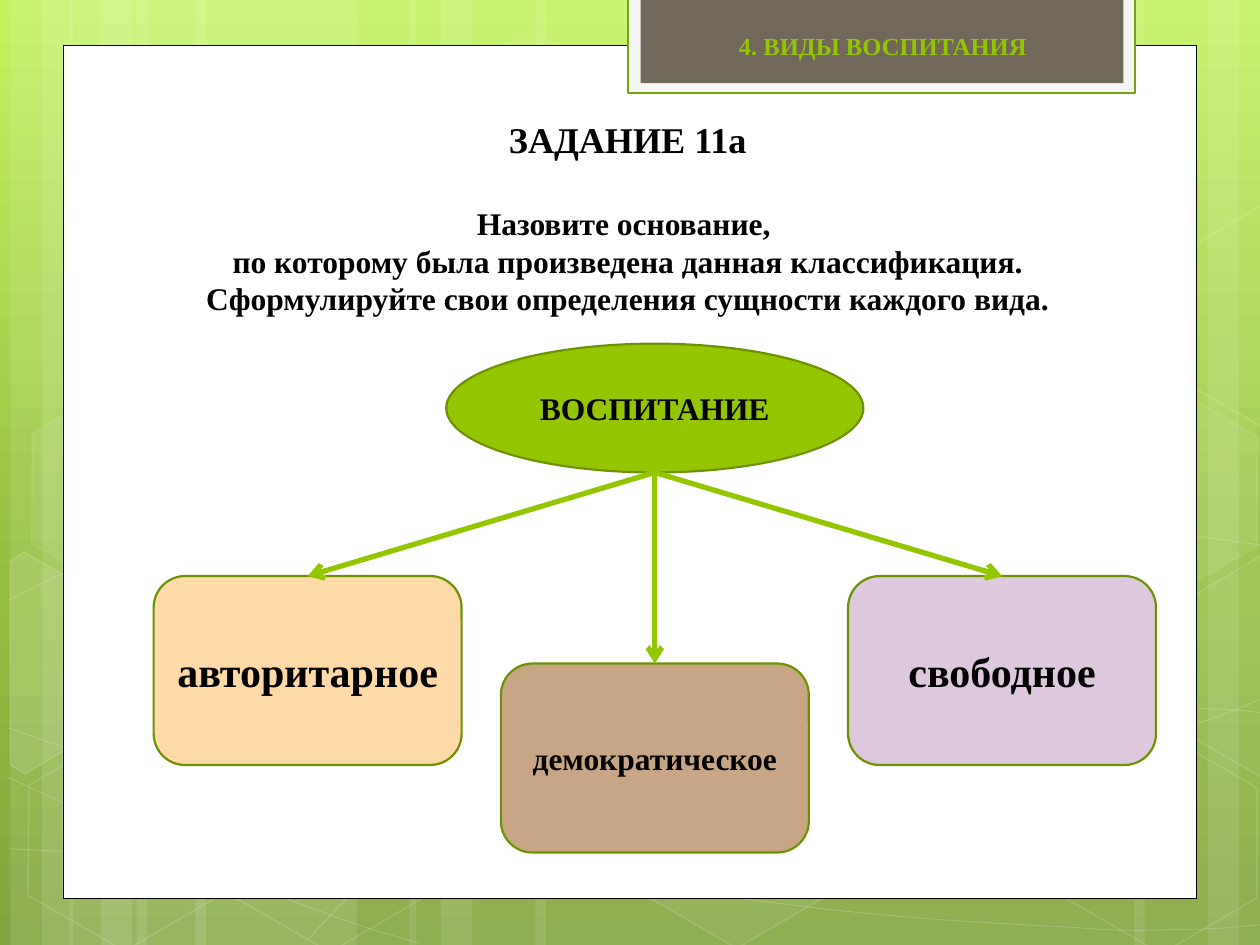
from math import cos, radians, sin

from lxml.etree import SubElement
from pptx import Presentation
from pptx.dml.color import RGBColor
from pptx.enum.shapes import MSO_CONNECTOR, MSO_SHAPE
from pptx.enum.text import MSO_ANCHOR, PP_ALIGN
from pptx.oxml.ns import qn
from pptx.util import Pt

COLORS = {
    "sky": "C3F35F", "grass": "93BF3F", "moss": "81A53E",
    "white": "FFFFFF", "black": "000000", "frame": "F5F5F5",
    "frame_line": "74A510", "tab": "71685A",
    "green": "94C600", "outline": "6D9200",
    "peach": "FFD9A7", "brown": "C8A685", "lilac": "DEC8DE",
}
RGB = {name: RGBColor.from_string(code) for name, code in COLORS.items()}


def style(shape, fill=None, line=None, width=1, fill_alpha=100, line_alpha=100):
    """Set fill and line; the alphas are opacities in percent."""
    shape.shadow.inherit = False
    for part, color, alpha in ((shape.fill, fill, fill_alpha),
                               (shape.line.fill, line, line_alpha)):
        if color is None:
            part.background()
            continue
        part.solid()
        part.fore_color.rgb = RGB[color]
        if alpha < 100:
            owner = shape._element.spPr if part is shape.fill else shape.line._ln
            tint = owner.find(qn("a:solidFill"))[0]
            SubElement(tint, qn("a:alpha"), val=str(alpha * 1000))
    if line:
        shape.line.width = Pt(width)


def write(shape, text, size, color="black", anchor=MSO_ANCHOR.MIDDLE):
    """Write centred bold text and return its paragraphs."""
    frame = shape.text_frame
    frame.word_wrap = True
    frame.vertical_anchor = anchor
    frame.text = text
    for para in frame.paragraphs:
        para.alignment = PP_ALIGN.CENTER
        para.font.name = "Times New Roman"
        para.font.size = Pt(size)
        para.font.bold = True
        para.font.color.rgb = RGB[color]
    return frame.paragraphs


deck = Presentation()
deck.slide_width, deck.slide_height = Pt(720), Pt(540)
page = deck.slides.add_slide(deck.slide_layouts[6])
shapes = page.shapes

# Background gradient, top to bottom
backdrop = page.background.fill
backdrop.gradient()
backdrop.gradient_angle = 270
stop_list = page.background._cSld.find(".//" + qn("a:gsLst"))
for stop in list(stop_list):
    stop_list.remove(stop)
for position, name in ((0, "sky"), (62, "grass"), (100, "moss")):
    stop = SubElement(stop_list, qn("a:gs"), pos=str(position * 1000))
    SubElement(stop, qn("a:srgbClr"), val=COLORS[name])

# Pale vertical bands: left, width, rotation
for left, width, turn in (
        (78, 126, 0), (6, 36, 0), (24, 60, 0), (111.6, 126, 0), (39.6, 36, 0),
        (57.6, 60, 0), (528, 126, 180), (690, 36, 180), (648, 60, 180),
        (306, 222, 0), (234, 36, 0), (252, 60, 0)):
    band = shapes.add_shape(MSO_SHAPE.RECTANGLE, Pt(left), 0, Pt(width), Pt(540))
    band.rotation = turn
    style(band, "white", fill_alpha=10)

# Thin arcs: a start point, then three points for each Bezier piece
ARCS = [
    [(5, 485), (44, 487), (83, 489), (137, 488), (191, 487), (258, 486), (330, 479),
     (402, 472), (504, 458), (570, 444), (636, 431), (703, 409), (725, 397)],
    [(5, 343), (26, 332), (47, 321), (87, 310), (128, 300), (186, 284), (250, 279),
     (314, 274), (392, 273), (471, 279), (550, 284), (682, 307), (725, 312)],
    [(4, 444), (91, 484), (178, 523), (240, 539)],
    [(5, 416), (27, 424), (50, 432), (92, 443), (134, 454), (197, 472), (257, 485),
     (317, 497), (392, 510), (452, 517), (512, 525), (576, 528), (614, 530),
     (652, 533), (662, 531), (680, 531), (699, 531), (712, 529), (725, 528)],
    [(174, 539), (187, 525), (200, 510), (217, 498), (235, 485), (259, 470), (279, 460),
     (300, 450), (312, 446), (338, 438), (364, 431), (413, 421), (438, 416),
     (464, 411), (467, 411), (490, 410), (512, 408), (547, 405), (572, 405),
     (597, 404), (638, 405), (638, 405), (654, 405), (670, 405), (686, 405),
     (699, 405), (711, 406), (718, 407), (724, 407), (722, 407), (724, 407)],
]
for arc in ARCS:
    start, *others = [(Pt(x), Pt(y)) for x, y in arc]
    builder = shapes.build_freeform(*start)
    builder.add_line_segments(others, close=False)
    curve = builder.convert_to_shape()
    # Join each three straight pieces into one Bezier piece
    pieces = list(curve._element.iter(qn("a:lnTo")))
    outline = pieces[0].getparent()
    for first in range(0, len(pieces), 3):
        bezier = SubElement(outline, qn("a:cubicBezTo"))
        for piece in pieces[first:first + 3]:
            bezier.append(piece[0])
            outline.remove(piece)
    style(curve, None, "white", 0.5, line_alpha=20)

# Hexagons: left, top, fill opacity, line opacity
for left, top, fill_alpha, line_alpha in (
        (240.5, 26, 4, 8), (357.8, 424, 6, 12), (8, 425.5, 0, 12), (10, 224.6, 7, 8),
        (125.3, 426.2, 0, 12), (542.2, 326.2, 10, 12), (600.5, 427, 0, 12),
        (600.5, 226, 7, 8)):
    hexagon = shapes.add_shape(MSO_SHAPE.HEXAGON, Pt(left), Pt(top), Pt(126), Pt(109.4))
    hexagon.adjustments[0] = 0.285
    hexagon.rotation = 30
    style(hexagon, "white" if fill_alpha else None, "white", 1, fill_alpha, line_alpha)

# Hexagons cut by the page edges: opacities, centre, corners as seen on the page
COS, SIN = cos(radians(30)), sin(radians(30))
for fill_alpha, (mid_x, mid_y), corners in (
        (10, (26, 385.2), [(5.8, 320.4), (13.7, 315.4), (69.1, 347), (68.4, 410.4),
                           (14.4, 442), (5.8, 437)]),
        (4, (709.2, 374.4), [(666.7, 349.2), (720.7, 317.5), (726.5, 321.1),
                             (726.5, 441.4), (721.4, 444.2), (666.7, 412.6)]),
        (0, (709.2, 173.5), [(666.7, 149), (720.7, 117.4), (727.2, 121),
                             (726.5, 241.2), (721.4, 244), (666.7, 212.4)])):
    start, *others = [(Pt(mid_x + (x - mid_x) * COS + (y - mid_y) * SIN),
                       Pt(mid_y - (x - mid_x) * SIN + (y - mid_y) * COS))
                      for x, y in corners]
    builder = shapes.build_freeform(*start)
    builder.add_line_segments(others, close=True)
    cut = builder.convert_to_shape()
    cut.rotation = 30
    style(cut, "white" if fill_alpha else None, "white", 1, fill_alpha, 12)

# White sheet and header tab
for left, top, width, height, fill, line, weight in (
        (36, 26, 648, 487.2, "white", "black", 0.5),
        (359, -1.5, 289.6, 54.7, "frame", "frame_line", 1.25),
        (366, -1.5, 276, 49, "tab", None, 0)):
    panel = shapes.add_shape(MSO_SHAPE.RECTANGLE, Pt(left), Pt(top), Pt(width), Pt(height))
    style(panel, fill, line, weight)

# Task text
task = shapes.add_textbox(Pt(82.2), Pt(66), Pt(553), Pt(118.6))
heading, question = write(
    task,
    "ЗАДАНИЕ 11а\n"
    "Назовите основание, \v"
    "по которому была произведена данная классификация.\v"
    "Сформулируйте свои определения сущности каждого вида.",
    18, anchor=MSO_ANCHOR.BOTTOM)
heading.font.size = Pt(20.7)
heading.space_after = Pt(25)
question.line_spacing = Pt(21.4)

# Section label
label = shapes.add_textbox(Pt(365.5), Pt(2), Pt(278), Pt(36))
write(label, "4. ВИДЫ ВОСПИТАНИЯ", 14, "green", MSO_ANCHOR.BOTTOM)

# Root of the classification
root = shapes.add_shape(MSO_SHAPE.OVAL, Pt(255), Pt(196.4), Pt(238.4), Pt(73.6))
style(root, "green", "outline", 1.25)
write(root, "ВОСПИТАНИЕ", 18)

# Kinds of upbringing
kinds = []
for column, (word, top, size, fill) in enumerate((
        ("авторитарное", 329.2, 24, "peach"),
        ("демократическое", 379.2, 18, "brown"),
        ("свободное", 329.2, 24, "lilac"))):
    kind = shapes.add_shape(MSO_SHAPE.ROUNDED_RECTANGLE,
                            Pt(87.8 + 198.4 * column), Pt(top), Pt(176), Pt(108))
    style(kind, fill, "outline", 1.25)
    write(kind, word, size)
    kinds.append(kind)

# Arrows from the root to each kind
for kind in kinds:
    arrow = shapes.add_connector(MSO_CONNECTOR.STRAIGHT, root.left + root.width // 2,
                                 root.top + root.height, 0, 0)
    arrow.end_connect(kind, 0)
    arrow.line.color.rgb = RGB["green"]
    arrow.line.width = Pt(3)
    SubElement(arrow.line._ln, qn("a:tailEnd"), type="arrow")
    SubElement(arrow._element.spPr, qn("a:effectLst"))

deck.save("out.pptx")
